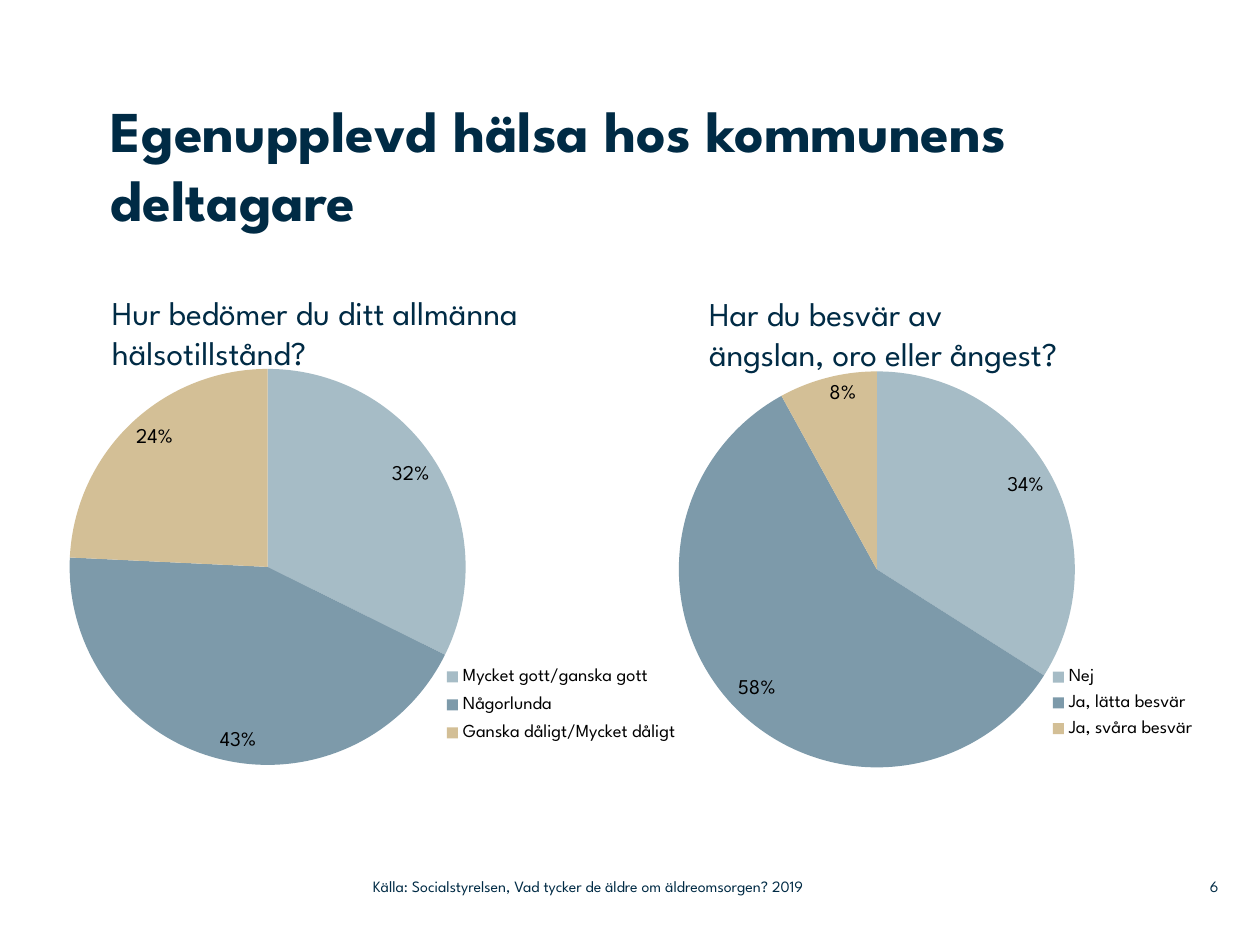
import pptx
import pptx.util
import pptx.dml.color
import pptx.chart.data
import pptx.enum.chart
import pptx.enum.text
import lxml.etree

Inches, Pt = pptx.util.Inches, pptx.util.Pt
rgb = pptx.dml.color.RGBColor.from_string
enum = pptx.enum.chart
anchor = pptx.enum.text.MSO_ANCHOR
align = pptx.enum.text.PP_ALIGN
face = "League Spartan"
hues = {"navy": "002B45", "black": "000000", "mist": "A6BCC6", "steel": "7D9AAA", "sand": "D3BF96"}

deck = pptx.Presentation()
deck.slide_width, deck.slide_height = Inches(10), Inches(7.5)
slide = deck.slides.add_slide(deck.slide_layouts[6])


def style(font, size, hue):
    font.name, font.size = face, Pt(size)
    font.color.rgb = rgb(hues[hue])


def place(parent, index, mode, box):
    for old in parent.findall("{*}layout"):
        parent.remove(old)
    ns = "{" + parent.nsmap["c"] + "}"
    layout = lxml.etree.Element(ns + "layout")
    manual = lxml.etree.SubElement(layout, ns + "manualLayout")
    pairs = [("xMode", "edge"), ("yMode", "edge"), *zip("xywh", box)]
    if mode:
        pairs.insert(0, ("layoutTarget", mode))
    for tag, val in pairs:
        lxml.etree.SubElement(manual, ns + tag).set("val", str(val))
    parent.insert(index, layout)


texts = [
    ("Egenupplevd hälsa hos kommunens deltagare", (0.88, 0.75, 8.27, 1.42), 33, 0, anchor.TOP, align.LEFT),
    ("Hur bedömer du ditt allmänna hälsotillstånd?", (0.79, 2.27, 4.07, 0.74), 19, 0.1, anchor.TOP, align.LEFT),
    ("Har du besvär av \vängslan, oro eller ångest?", (5.53, 2.28, 3.71, 0.74), 19, 0.1, anchor.TOP, align.LEFT),
    ("6", (9.2, 6.89, 0.47, 0.29), 9, 0, anchor.MIDDLE, align.RIGHT),
    ("Källa: Socialstyrelsen, Vad tycker de äldre om äldreomsorgen? 2019",
     (2.96, 6.89, 4.43, 0.29), 9, 0, anchor.MIDDLE, align.LEFT),
]
for words, spot, size, pad, hold, side in texts:
    frame = slide.shapes.add_textbox(*map(Inches, spot)).text_frame
    frame.word_wrap = True
    frame.vertical_anchor = hold
    frame.margin_left = frame.margin_right = Inches(pad)
    frame.margin_top = frame.margin_bottom = Inches(pad / 2)
    frame.text = words
    para = frame.paragraphs[0]
    para.alignment = side
    for run in para.runs:
        style(run.font, size, "navy")
        run.font.bold = size == 33

pies = [
    (0.39, 2.79, ["Mycket gott/ganska gott", "Någorlunda", "Ganska dåligt/Mycket dåligt"],
     [32, 43, 24], (0.03, 0.04, 0.58, 0.92), (0.57, 0.71, 0.36, 0.22)),
    (4.9, 2.81, ["Nej", "Ja, lätta besvär", "Ja, svåra besvär"],
     [34, 58, 8], (0.09, 0.04, 0.58, 0.92), (0.62, 0.71, 0.24, 0.2)),
]
for left, top, names, vals, disc, key in pies:
    data = pptx.chart.data.CategoryChartData()
    data.categories = names
    data.add_series("Series 1", vals)
    chart = slide.shapes.add_chart(
        enum.XL_CHART_TYPE.PIE, Inches(left), Inches(top), Inches(5.42), Inches(3.42), data).chart
    chart.has_title = False
    style(chart.font, 10, "black")
    chart.has_legend = True
    legend = chart.legend
    legend.position = enum.XL_LEGEND_POSITION.RIGHT
    legend.include_in_layout = False
    style(legend.font, 10.5, "black")
    place(legend._element, 1, None, key)
    plot = chart.plots[0]
    plot.vary_by_categories = True
    place(chart._chartSpace.chart.plotArea, 0, "inner", disc)
    series = plot.series[0]
    for num, hue in enumerate(("mist", "steel", "sand")):
        fmt = series.points[num].format
        fmt.fill.solid()
        fmt.fill.fore_color.rgb = rgb(hues[hue])
        fmt.line.fill.background()
    labels = series.data_labels
    labels.show_percentage = True
    labels.show_value = False
    labels.number_format = "0%"
    labels.number_format_is_linked = False
    labels.position = enum.XL_LABEL_POSITION.INSIDE_END
    style(labels.font, 12, "black")

deck.save("out.pptx")
